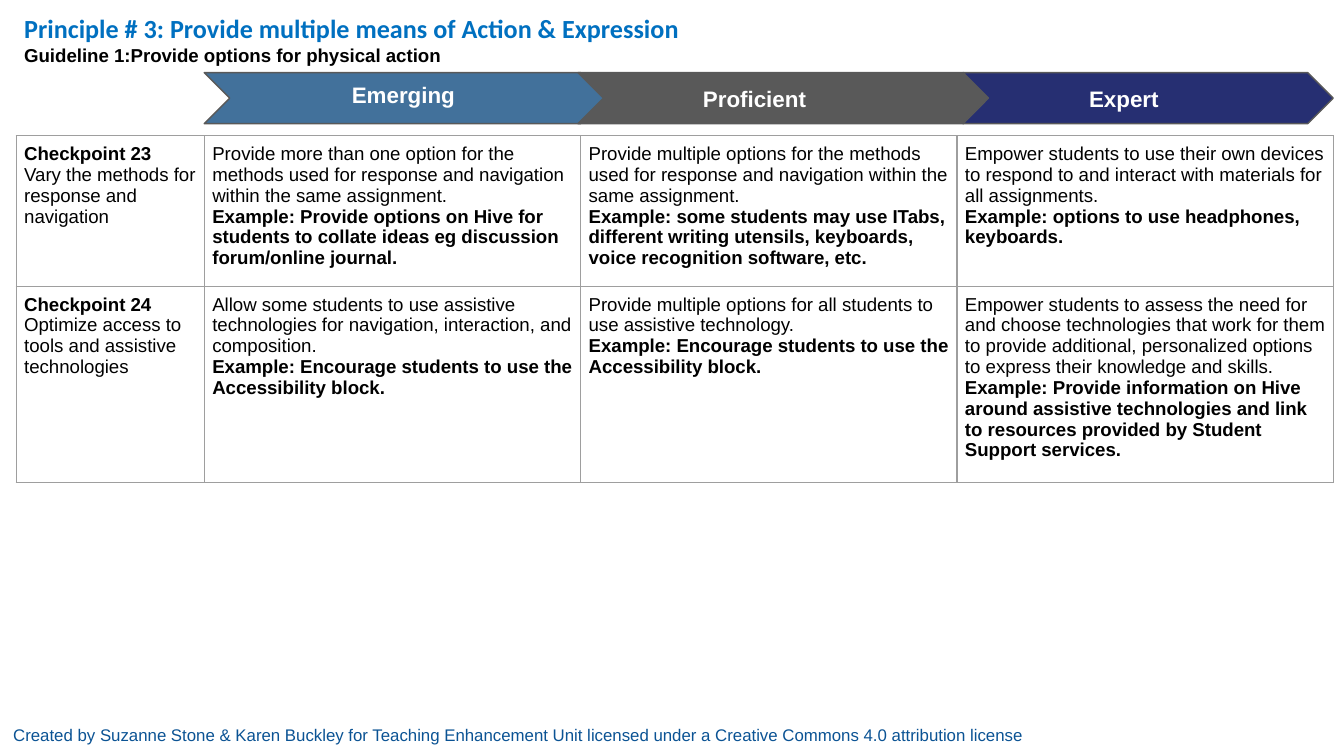
import pptx
import pptx.util
import pptx.dml.color
import pptx.enum.shapes
import pptx.enum.text
import pptx.oxml
import pptx.oxml.ns

RGBColor = pptx.dml.color.RGBColor
Inches = pptx.util.Inches

BLACK = RGBColor(0x00, 0x00, 0x00)
WHITE = RGBColor(0xFF, 0xFF, 0xFF)
TITLE_BLUE = RGBColor(0x00, 0x70, 0xC0)
CREDIT_BLUE = RGBColor(0x0B, 0x53, 0x94)
STEEL = RGBColor(0x42, 0x71, 0x9B)
GREY = RGBColor(0x59, 0x59, 0x59)
NAVY = RGBColor(0x26, 0x2F, 0x72)
BORDER = "9E9E9E"

SLIDE_W = 10
SLIDE_H = SLIDE_W * 9 / 16
MARGIN = 0.12
COL = 1.4            # grid column: one for the checkpoint, two for each level
SPANS = (1, 2, 2, 2)
ROWS = (1.12, 1.46)
INSET = 0.06

# name, fill, chevron (left, width), label (left, top, width), in % of the band
LEVELS = (
    ("Emerging", STEEL, (0, 35.6), (11.9, -10.5, 14.7)),
    ("Proficient", GREY, (33.1, 36.4), (43, -1, 13.6)),
    ("Expert", NAVY, (67.2, 32.8), (77.2, -2.6, 13.6)),
)

# Each cell: first part, second part
CHECKPOINTS = (
    (
        ("Checkpoint 23", "Vary the methods for response and navigation"),
        ("Provide more than one option for the methods used for response and "
         "navigation within the same assignment.",
         "Example: Provide options on Hive for students to collate ideas eg "
         "discussion forum/online journal."),
        ("Provide multiple options for the methods used for response and "
         "navigation within the same assignment.",
         "Example: some students may use ITabs, different writing utensils, "
         "keyboards, voice recognition software, etc."),
        ("Empower students to use their own devices to respond to and interact "
         "with materials for all assignments.",
         "Example: options to use headphones, keyboards."),
    ),
    (
        ("Checkpoint 24", "Optimize access to tools and assistive technologies"),
        ("Allow some students to use assistive technologies for navigation, "
         "interaction, and composition.",
         "Example: Encourage students to use the Accessibility block."),
        ("Provide multiple options for all students to use assistive technology.",
         "Example: Encourage students to use the Accessibility block."),
        ("Empower students to assess the need for and choose technologies that "
         "work for them to provide additional, personalized options to express "
         "their knowledge and skills.",
         "Example: Provide information on Hive around assistive technologies and "
         "link to resources provided by Student Support services."),
    ),
)


def inches(*lengths):
    return [Inches(n) for n in lengths]


def within(box, left, top, width, height):
    """Turn percentages of a box into slide lengths."""
    x, y, w, h = box
    return inches(x + w * left / 100, y + h * top / 100,
                  w * width / 100, h * height / 100)


def add_text(tf, text, size=10, font="Arial", color=BLACK, bold=False,
             line_break=False):
    """Fill the empty first paragraph, append one, or go on after a line break."""
    p = tf.paragraphs[-1]
    if line_break:
        p.add_line_break()
    elif tf.text:
        p = tf.add_paragraph()
    p.alignment = pptx.enum.text.PP_ALIGN.LEFT
    r = p.add_run()
    r.text = text
    r.font.size = pptx.util.Pt(size)
    r.font.name = font
    r.font.bold = bold
    r.font.color.rgb = color


def format_frame(tf, inset):
    tf.word_wrap = True
    tf.auto_size = pptx.enum.text.MSO_AUTO_SIZE.NONE
    tf.vertical_anchor = pptx.enum.text.MSO_ANCHOR.TOP
    tf.margin_left = tf.margin_right = Inches(inset)
    tf.margin_top = tf.margin_bottom = Inches(inset)
    return tf


def add_heading(s, box):
    title = s.shapes.title
    title.left, title.top, title.width, title.height = inches(*box)
    tf = format_frame(title.text_frame, INSET)
    add_text(tf, "Principle # 3: Provide multiple means of Action & Expression",
             size=14, font="Calibri", color=TITLE_BLUE, bold=True)
    add_text(tf, "Guideline 1:Provide options for physical action", bold=True,
             line_break=True)


def add_level_band(s, box):
    chevron = pptx.enum.shapes.MSO_SHAPE.CHEVRON
    for name, fill, (left, width), label in LEVELS:
        sp = s.shapes.add_shape(chevron, *within(box, left, 0, width, 100))
        sp.adjustments[0] = 0.5
        sp.shadow.inherit = False
        sp.fill.solid()
        sp.fill.fore_color.rgb = fill
        sp.line.color.rgb = GREY
        sp.line.width = pptx.util.Pt(0.75)
    for name, fill, chevron_span, (left, top, width) in LEVELS:
        sp = s.shapes.add_textbox(*within(box, left, top, width, 147))
        add_text(format_frame(sp.text_frame, 0.1), name, size=12, color=WHITE,
                 bold=True)


def add_borders(cell):
    tc_pr = cell._tc.get_or_add_tcPr()
    for i, side in enumerate(("lnL", "lnR", "lnT", "lnB")):
        tc_pr.insert(i, pptx.oxml.parse_xml(
            f'<a:{side} {pptx.oxml.ns.nsdecls("a")} w="9525"><a:solidFill>'
            f'<a:srgbClr val="{BORDER}"/></a:solidFill></a:{side}>'))


def add_checkpoints(s, box):
    table = s.shapes.add_table(len(ROWS), len(SPANS), *inches(*box)).table
    table.first_row = table.horz_banding = False
    for column, span in zip(table.columns, SPANS):
        column.width = Inches(span * COL)
    for row, height, texts in zip(table.rows, ROWS, CHECKPOINTS):
        row.height = Inches(height)
        for i, (cell, (first, second)) in enumerate(zip(row.cells, texts)):
            is_label = i == 0
            cell.fill.background()
            cell.margin_left = cell.margin_right = Inches(INSET)
            cell.margin_top = cell.margin_bottom = Inches(INSET)
            add_text(cell.text_frame, first, bold=is_label)
            add_text(cell.text_frame, second, bold=not is_label,
                     line_break=is_label)
            add_borders(cell)


def add_credit(s, box):
    sp = s.shapes.add_textbox(*inches(*box))
    add_text(format_frame(sp.text_frame, 0.1),
             "Created by Suzanne Stone & Karen Buckley for Teaching Enhancement "
             "Unit licensed under a Creative Commons 4.0 attribution license",
             size=9, color=CREDIT_BLUE)


def main():
    prs = pptx.Presentation()
    prs.slide_width, prs.slide_height = inches(SLIDE_W, SLIDE_H)
    s = prs.slides.add_slide(prs.slide_layouts.get_by_name("Title Only"))
    table_width = sum(SPANS) * COL
    add_credit(s, (0, 5.29, 9.87, 0.33))
    add_checkpoints(s, (MARGIN, 1.01, table_width, sum(ROWS)))
    add_heading(s, (MARGIN, 0.03, 9.41, 0.61))
    add_level_band(s, (MARGIN + COL, 0.54, table_width - COL, 0.38))
    prs.save("out.pptx")


if __name__ == "__main__":
    main()
